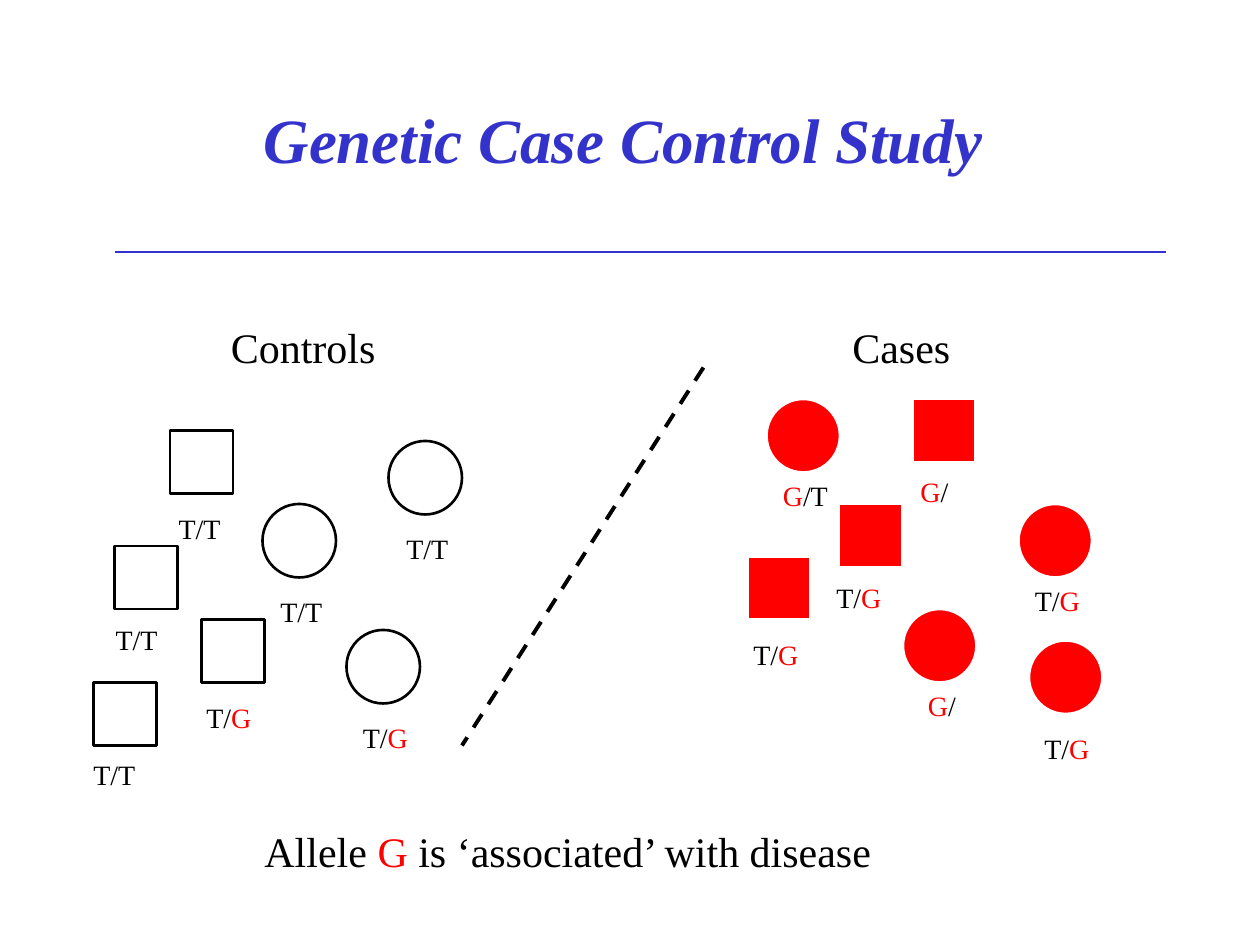
from itertools import groupby

from pptx import Presentation
from pptx.dml.color import RGBColor
from pptx.enum.dml import MSO_LINE
from pptx.enum.shapes import MSO_CONNECTOR, MSO_SHAPE
from pptx.enum.text import MSO_AUTO_SIZE, PP_ALIGN
from pptx.util import Inches, Pt
from lxml.etree import SubElement
from pptx.oxml.ns import qn

COLORS = {"black": "000000", "white": "FFFFFF", "red": "FF0000", "blue": "3333CC"}
FONT = "Times New Roman"
RISK_ALLELE = "G"
COLUMNS, ROWS = 120, 90  # grid of twelve units to the inch
MALE, FEMALE = (MSO_SHAPE.RECTANGLE, 6), (MSO_SHAPE.OVAL, 7)  # shape, size
LABEL_WIDTH, LABEL_HEIGHT = 6.7, 4.4


def rgb(name):
    return RGBColor.from_string(COLORS[name])


class StudySlide:
    def __init__(self, deck):
        self.slide = deck.slides.add_slide(deck.slide_layouts[6])
        self.column = deck.slide_width / COLUMNS
        self.row = deck.slide_height / ROWS

    def place(self, x, y):
        return round(x * self.column), round(y * self.row)

    def text(self, words, x, y, width, height, size, color="black",
             align=PP_ALIGN.LEFT, wrap=False, mark_risk=True, slanted_bold=False):
        box = self.slide.shapes.add_textbox(*self.place(x, y), *self.place(width, height))
        frame = box.text_frame
        frame.word_wrap = wrap
        frame.auto_size = MSO_AUTO_SIZE.SHAPE_TO_FIT_TEXT
        paragraph = frame.paragraphs[0]
        paragraph.alignment = align
        font = paragraph.font
        font.name, font.size = FONT, Pt(size)
        font.bold = font.italic = slanted_bold
        font.color.rgb = rgb(color)
        # The risk allele stands out in red
        for risky, letters in groupby(words, lambda c: mark_risk and c == RISK_ALLELE):
            run = paragraph.add_run()
            run.text = "".join(letters)
            if risky:
                run.font.color.rgb = rgb("red")

    def person(self, sex, x, y, genotype, label_center, label_top, affected):
        preset, size = sex
        symbol = self.slide.shapes.add_shape(
            preset, *self.place(x, y), *self.place(size, size))
        symbol.shadow.inherit = False
        if affected:
            symbol.fill.solid()
            symbol.fill.fore_color.rgb = rgb("red")
        else:
            symbol.fill.background()
        symbol.line.color.rgb = rgb("white" if affected else "black")
        symbol.line.width = Pt(1.5)
        self.text(genotype, label_center - LABEL_WIDTH / 2, label_top,
                  LABEL_WIDTH, LABEL_HEIGHT, 16, align=PP_ALIGN.CENTER)

    def line(self, start, end, color, width, dash=None):
        rule = self.slide.shapes.add_connector(
            MSO_CONNECTOR.STRAIGHT, *self.place(*start), *self.place(*end))
        rule.line.color.rgb = rgb(color)
        rule.line.width = Pt(width)
        if dash:
            rule.line.dash_style = dash
        SubElement(rule._element.spPr, qn("a:effectLst"))


# Sex, symbol column and row, genotype, label centre and top
CONTROLS = [
    (FEMALE, 25, 48, "T/T", 28.7, 56),
    (MALE, 10.9, 52, "T/T", 13, 58.7),
    (MALE, 16.2, 41, "T/T", 19, 48.1),
    (MALE, 19.2, 59, "T/G", 21.8, 66.1),
    (FEMALE, 33, 60, "T/G", 36.7, 68),
    (FEMALE, 37, 42, "T/T", 40.7, 50),
    (MALE, 8.9, 65, "T/T", 10.9, 71.6),
]
CASES = [
    (MALE, 71.2, 53, "T/G", 73.9, 60.1),
    (FEMALE, 73, 38, "G/T", 76.7, 45),
    (FEMALE, 98, 61, "T/G", 101.6, 69.1),
    (MALE, 79.9, 48, "T/G", 81.8, 54.7),
    (FEMALE, 97, 48, "T/G", 100.7, 55),
    (MALE, 86.9, 38, "G/", 89, 44.6),
    (FEMALE, 86, 58, "G/", 89.7, 65),
]


def main():
    deck = Presentation()
    deck.slide_width, deck.slide_height = Inches(10), Inches(7.5)
    study = StudySlide(deck)

    # Title and rule
    study.text("Genetic Case Control Study", 23.9, 9, 70.9, 8.4, 36, "blue",
               PP_ALIGN.CENTER, mark_risk=False, slanted_bold=True)
    study.line((11, 24), (111, 24), "blue", 0.75)

    # Groups and the divider between them
    study.text("Controls", 20.8, 30, 16.2, 6, 24)
    study.text("Cases", 80, 30, 11.8, 6, 24)
    study.line((67, 35), (44, 71), "black", 2.25, MSO_LINE.DASH)
    for people, affected in ((CONTROLS, False), (CASES, True)):
        for person in people:
            study.person(*person, affected)

    # Conclusion
    study.text("Allele G is ‘associated’ with disease", 24, 78, 62, 6, 24, wrap=True)

    deck.save("out.pptx")


if __name__ == "__main__":
    main()
